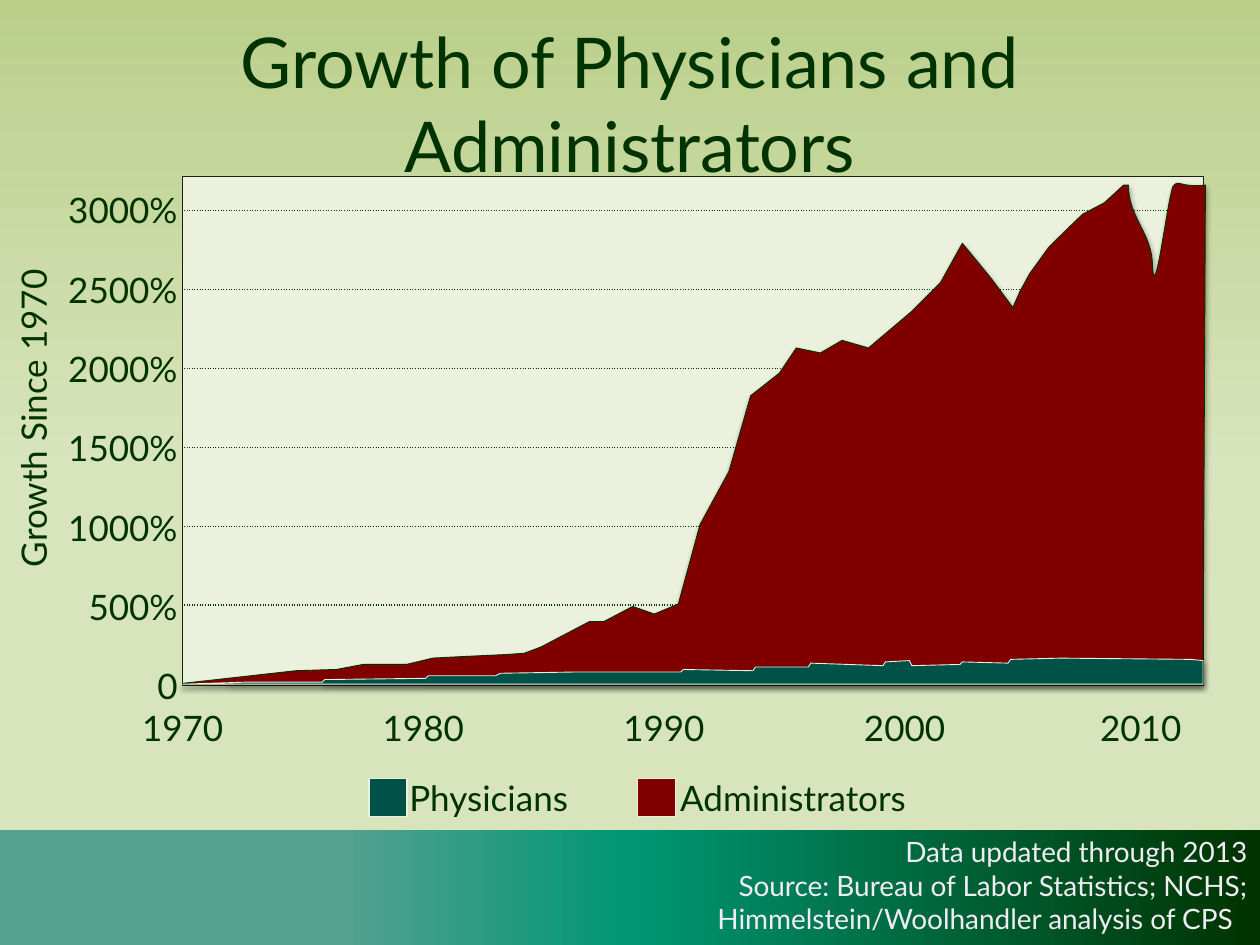
import pptx
import pptx.util
import pptx.dml.color
import pptx.enum.shapes
import pptx.enum.text
import pptx.oxml
import pptx.oxml.ns

Inches = pptx.util.Inches
Pt = pptx.util.Pt
RECT = pptx.enum.shapes.MSO_SHAPE.RECTANGLE
ALIGN = pptx.enum.text.PP_ALIGN
ANCHOR = pptx.enum.text.MSO_ANCHOR
NS = pptx.oxml.ns.nsdecls("a")
qn = pptx.oxml.ns.qn

DARK, PALE, GREEN, RED = "003300", "EBF1DD", "005148", "800000"
TITLE = "Growth of Physicians and Administrators"
AXIS = "Growth Since 1970"
NOTES = [
    "Data updated through 2013",
    "Source: Bureau of Labor Statistics; NCHS; Himmelstein/Woolhandler analysis of CPS  ",
]
TICKS = ["3000%", "2500%", "2000%", "1500%", "1000%", "500%", "0"]
YEARS = ["1970", "1980", "1990", "2000", "2010 "]
LEGEND = [("Physicians", GREEN, 2.93, 3.15, 1.78),
          ("Administrators", RED, 5.06, 5.3, 2.57)]

# (years since 1970, growth in percent)
ADMIN = [
    (0, 5), (4.7, 85), (6.4, 93), (7.5, 125), (9.3, 125), (10.4, 165),
    (11.4, 173), (13.5, 188), (14.2, 196), (14.9, 236), (16.9, 396),
    (17.5, 396), (18.7, 492), (19.6, 444), (20.6, 508), (21.5, 1011),
    (22.7, 1347), (23.6, 1826), (24.8, 1970), (25.5, 2129), (26.5, 2097),
    (27.4, 2177), (28.5, 2129), (30.3, 2361), (31.5, 2545), (32.4, 2792),
    (33.6, 2569), (34.5, 2385), (34.8, 2489), (35.2, 2600), (36, 2768),
    (36.8, 2888), (37.4, 2976), (38.3, 3048), (38.7, 3104), (39.1, 3160),
    (39.3, 3160),
]
CURVES = [
    [(39.3, 2952), (40.3, 2856), (40.3, 2648)],
    [(40.4, 2361), (41, 3176), (41.2, 3160)],
    [(41.4, 3192), (41.5, 3144), (42.5, 3160)],
]
DOCTORS = [
    (0, 0), (2.7, 13), (5.8, 13), (5.9, 29), (10.1, 37), (10.2, 53),
    (13, 53), (13.2, 69), (16.4, 77), (20.7, 77), (20.8, 93), (23.7, 85),
    (23.8, 109), (26, 109), (26.1, 133), (29.1, 117), (29.2, 141),
    (30.2, 149), (30.3, 117), (32.3, 125), (32.4, 141), (34.3, 133),
    (34.4, 157), (36.5, 165), (41.9, 157), (42.4, 149),
]

LEFT, TOP, WIDE, HIGH = 1.45, 1.4, 8.1, 4.04
BASE = 5.43
DECADE = 1.91
SPAN = 42.4
STEP = 0.63
RISE = 3.76 / 3000


def place(year, growth):
    return LEFT + year * DECADE / 10, BASE - growth * RISE


def color(code):
    return pptx.dml.color.RGBColor.from_string(code)


def blend(fill, owner, stops, angle):
    fill.gradient()
    node = next(owner.iter(qn("a:gradFill")))
    for child in list(node):
        node.remove(child)
    marks = "".join(f'<a:gs pos="{pos * 1000}"><a:srgbClr val="{code}"/></a:gs>'
                    for pos, code in stops)
    node.append(pptx.oxml.parse_xml(f"<a:gsLst {NS}>{marks}</a:gsLst>"))
    node.append(pptx.oxml.parse_xml(
        f'<a:lin {NS} ang="{angle * 60000}" scaled="0"/>'))


def paint(shape, fill, line, width):
    shape.shadow.inherit = False
    shape.fill.solid()
    shape.fill.fore_color.rgb = color(fill)
    shape.line.color.rgb = color(line)
    shape.line.width = Pt(width)


def write(frame, text, size=20, ink=DARK, align=ALIGN.LEFT):
    lines = [text] if isinstance(text, str) else text
    for i, line in enumerate(lines):
        para = frame.add_paragraph() if i else frame.paragraphs[0]
        para.alignment = align
        run = para.add_run()
        run.text = line
        run.font.size = Pt(size)
        run.font.name = "Lato"
        run.font.color.rgb = color(ink)


def label(text, box, anchor=ANCHOR.TOP, turn=0, **style):
    shape = slide.shapes.add_textbox(*map(Inches, box))
    shape.rotation = turn
    shape.text_frame.word_wrap = True
    shape.text_frame.vertical_anchor = anchor
    write(shape.text_frame, text, **style)


def block(box, fill, line):
    paint(slide.shapes.add_shape(RECT, *map(Inches, box)), fill, line, 0.75)


def grid(rows, cols, left, top, width, height):
    table = slide.shapes.add_table(
        rows, cols, Inches(left), Inches(top),
        Inches(width * cols), Inches(height * rows)).table
    table.first_row = table.horz_banding = False
    style = next(table._tbl.iter(qn("a:tableStyleId")))
    style.text = "{2D5ABB26-0587-4C30-8999-92F81FD0307C}"
    cells = list(table.iter_cells())
    for cell in cells:
        cell.fill.background()
    return cells


def rule(cell):
    props = cell._tc.get_or_add_tcPr()
    for i, side in enumerate(("lnT", "lnB")):
        props.insert(i, pptx.oxml.parse_xml(
            f'<a:{side} {NS} w="9525"><a:solidFill><a:srgbClr val="{DARK}"/>'
            f'</a:solidFill><a:prstDash val="sysDot"/></a:{side}>'))


def bend(start, ends, count=16):
    points = [start, *ends]
    for i in range(1, count + 1):
        t = i / count
        part = ((1 - t) ** 3, 3 * t * (1 - t) ** 2, 3 * t * t * (1 - t), t ** 3)
        yield tuple(sum(k * p[axis] for k, p in zip(part, points))
                    for axis in (0, 1))


def area(series, fill, line):
    outline = [*series, (SPAN, 0), (0, 0)]
    spots = [tuple(map(Inches, place(*point))) for point in outline]
    maker = slide.shapes.build_freeform(*spots[0], scale=1.0)
    maker.add_line_segments(spots[1:], close=True)
    shape = maker.convert_to_shape()
    paint(shape, fill, line, 0.5)
    next(shape.element.iter(qn("a:effectLst"))).append(pptx.oxml.parse_xml(
        f'<a:outerShdw {NS} blurRad="{Pt(3.1)}" dist="{Pt(2)}" dir="5400000" '
        'rotWithShape="0"><a:srgbClr val="000000"><a:alpha val="38000"/>'
        "</a:srgbClr></a:outerShdw>"))


deck = pptx.Presentation()
deck.slide_width, deck.slide_height = Inches(10), Inches(7.5)
slide = deck.slides.add_slide(deck.slide_layouts[6])
blend(slide.background.fill, slide.element,
      [(0, "BBCF8B"), (50, "D8E4BC"), (100, "D8E4BC")], 90)

band = slide.shapes.add_shape(RECT, *map(Inches, (0, 6.59, 10, 0.91)))
band.shadow.inherit = False
band.line.fill.background()
blend(band.fill, band.element, [(27, "55A190"), (50, "009673"), (100, DARK)], 0)

block((LEFT, TOP, WIDE, HIGH), PALE, "1B210D")
peak = place(0, 3000)[1]
for cell in grid(5, 1, LEFT + 0.01, peak, WIDE - 0.01, 500 * RISE):
    rule(cell)

label(TITLE, (0, 0.19, 10, 1.25), anchor=ANCHOR.MIDDLE, size=40,
      align=ALIGN.CENTER)
label(NOTES, (3.7, 6.57, 6.3, 0.91), anchor=ANCHOR.MIDDLE, size=16,
      ink="EFECF3", align=ALIGN.RIGHT)
label(AXIS, (-1.02, 3.1, 2.57, 0.44), turn=270, align=ALIGN.CENTER)
for name, fill, left, start, width in LEGEND:
    block((left, 6.18, 0.3, 0.3), fill, PALE)
    label(name, (start, 6.11, width, 0.44))

for cell, tick in zip(grid(len(TICKS), 1, 0.34, 1.45, 1.17, STEP), TICKS):
    write(cell.text_frame, tick, align=ALIGN.RIGHT)
first = LEFT - DECADE / 2
for cell, year in zip(grid(1, len(YEARS), first, 5.56, DECADE, 0.41), YEARS):
    write(cell.text_frame, year, align=ALIGN.CENTER)

crest = list(ADMIN)
for ends in CURVES:
    crest.extend(bend(crest[-1], ends))
area(crest, RED, DARK)
area(DOCTORS, GREEN, PALE)

deck.save("out.pptx")
